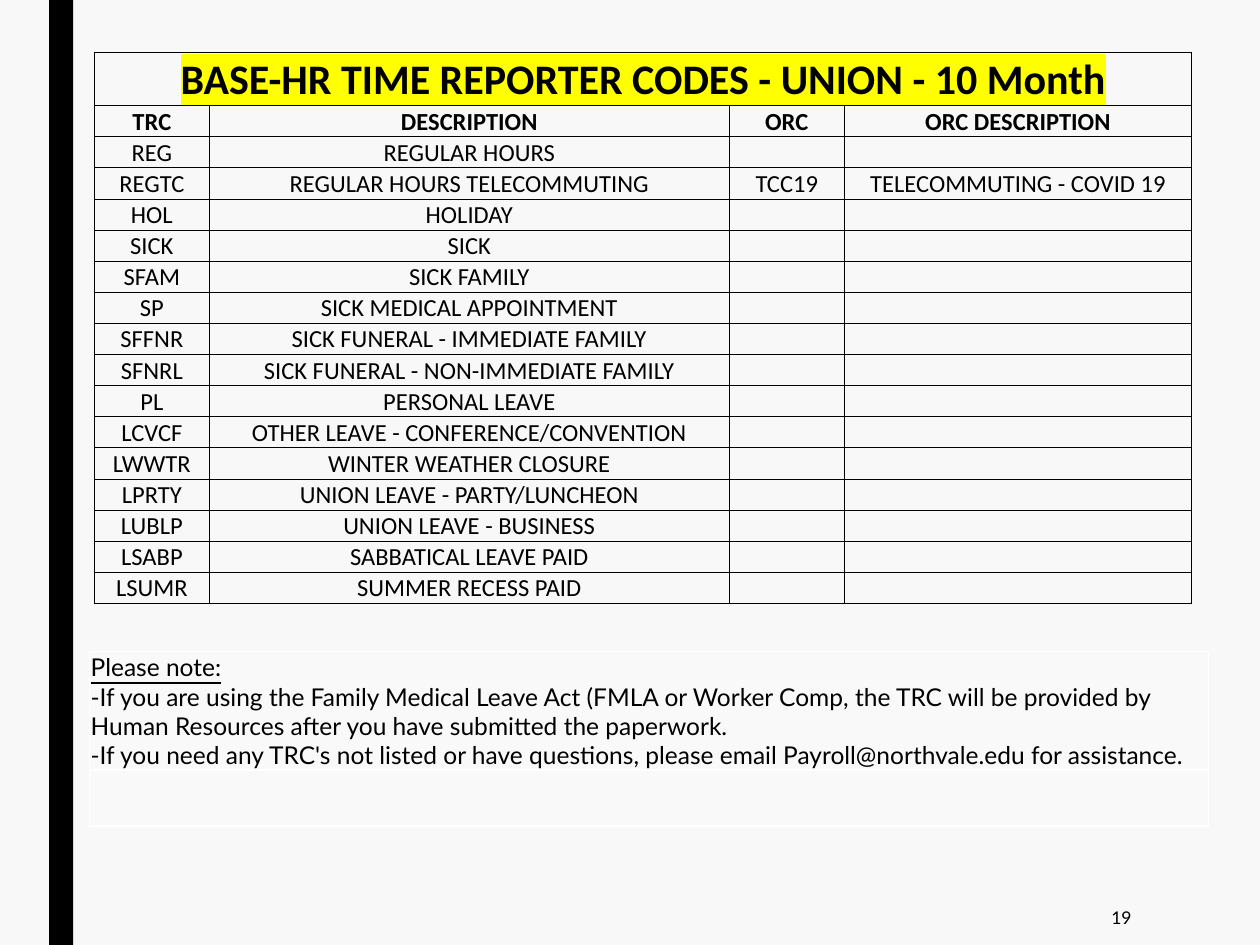
from dataclasses import dataclass
from lxml.etree import SubElement
from pptx import Presentation
from pptx.dml.color import RGBColor as RGB
from pptx.enum.shapes import MSO_SHAPE as Preset
from pptx.enum.text import MSO_ANCHOR as Anchor, PP_ALIGN as Align
from pptx.oxml.ns import qn
from pptx.slide import Slide
from pptx.util import Pt


@dataclass(frozen=True)
class Theme:
    background: str = "F8F8F8"
    ink: str = "000000"
    note_fill: str = "F9F9F9"
    note_border: str = "FFFFFF"
    marker: str = "FFFF00"
    code_font: str = "Calibri"
    note_font: str = "Lato"
    title_size: float = 24
    body_size: float = 14
    page_size: float = 10
    plain_table: str = "{2D5ABB26-0587-4C30-8999-92F81FD0307C}"


def write(paragraph, text, *, font, size, color, align=Align.LEFT,
          bold=False, underline=False, highlight=None):
    paragraph.alignment = align
    if not text:
        SubElement(paragraph._p, qn("a:endParaRPr"), sz=str(int(size * 100)))
        return
    run = paragraph.add_run()
    run.text = text
    style = run.font
    style.size, style.bold, style.underline = Pt(size), bold, underline
    style.color.rgb = RGB.from_string(color)
    if highlight:
        marker = SubElement(run._r.get_or_add_rPr(), qn("a:highlight"))
        SubElement(marker, qn("a:srgbClr"), val=highlight)
    style.name = font


@dataclass
class Page:
    theme: Theme
    slide: Slide

    def background(self):
        fill = self.slide.background.fill
        fill.solid()
        fill.fore_color.rgb = RGB.from_string(self.theme.background)

    def bar(self, left, top, width, height):
        bar = self.slide.shapes.add_shape(
            Preset.RECTANGLE, Pt(left), Pt(top), Pt(width), Pt(height))
        bar.shadow.inherit = False
        bar.fill.solid()
        bar.fill.fore_color.rgb = RGB.from_string(self.theme.ink)
        bar.line.fill.background()

    def text(self, left, top, width, height, words, **style):
        frame = self.slide.shapes.add_textbox(
            Pt(left), Pt(top), Pt(width), Pt(height)).text_frame
        frame.word_wrap = True
        frame.vertical_anchor = Anchor.MIDDLE
        write(frame.paragraphs[0], words, **style)

    def table(self, left, top, widths, heights):
        table = self.slide.shapes.add_table(
            len(heights), len(widths), Pt(left), Pt(top),
            Pt(sum(widths)), Pt(sum(heights))).table
        table.first_row = table.horz_banding = False
        table._tbl.tblPr.find(qn("a:tableStyleId")).text = self.theme.plain_table
        for column, width in zip(table.columns, widths):
            column.width = Pt(width)
        for row, height in zip(table.rows, heights):
            row.height = Pt(height)
        return table

    def cell(self, cell, border, weight, fill=None):
        cell.margin_left = cell.margin_right = cell.margin_top = Pt(0.7)
        cell.margin_bottom = 0
        cell.vertical_anchor = Anchor.BOTTOM
        for side in ("lnL", "lnR", "lnT", "lnB"):
            line = SubElement(cell._tc.get_or_add_tcPr(), qn(f"a:{side}"),
                              w=str(Pt(weight)))
            paint = SubElement(line, qn("a:solidFill"))
            SubElement(paint, qn("a:srgbClr"), val=border)
        if fill:
            cell.fill.solid()
            cell.fill.fore_color.rgb = RGB.from_string(fill)
        else:
            cell.fill.background()

    def code_table(self, left, top, widths, title, rows):
        theme = self.theme
        style = dict(font=theme.code_font, color=theme.ink, align=Align.CENTER)
        table = self.table(left, top, widths, [30.4] + [17.8] * len(rows))
        for cell in table.iter_cells():
            self.cell(cell, theme.ink, 0.5)
        heading = table.cell(0, 0)
        heading.merge(table.cell(0, len(widths) - 1))
        write(heading.text_frame.paragraphs[0], title, size=theme.title_size,
              bold=True, highlight=theme.marker, **style)
        for r, row in enumerate(rows, 1):
            for c in range(len(widths)):
                words = row[c] if c < len(row) else ""
                write(table.cell(r, c).text_frame.paragraphs[0], words,
                      size=theme.body_size, bold=r == 1, **style)

    def note_table(self, left, top, width, heights, lines):
        theme = self.theme
        table = self.table(left, top, [width], heights)
        for cell in table.iter_cells():
            self.cell(cell, theme.note_border, 1, theme.note_fill)
        frame = table.cell(0, 0).text_frame
        for i, words in enumerate(lines):
            paragraph = frame.add_paragraph() if i else frame.paragraphs[0]
            write(paragraph, words, font=theme.note_font, size=theme.body_size,
                  color=theme.ink, underline=i == 0)


CODES = [
    ("TRC", "DESCRIPTION", "ORC", "ORC DESCRIPTION"),
    ("REG", "REGULAR HOURS"),
    ("REGTC", "REGULAR HOURS TELECOMMUTING", "TCC19", "TELECOMMUTING - COVID 19"),
    ("HOL", "HOLIDAY"),
    ("SICK", "SICK"),
    ("SFAM", "SICK FAMILY"),
    ("SP", "SICK MEDICAL APPOINTMENT"),
    ("SFFNR", "SICK FUNERAL - IMMEDIATE FAMILY"),
    ("SFNRL", "SICK FUNERAL - NON-IMMEDIATE FAMILY"),
    ("PL", "PERSONAL LEAVE"),
    ("LCVCF", "OTHER LEAVE - CONFERENCE/CONVENTION"),
    ("LWWTR", "WINTER WEATHER CLOSURE"),
    ("LPRTY", "UNION LEAVE - PARTY/LUNCHEON"),
    ("LUBLP", "UNION LEAVE - BUSINESS"),
    ("LSABP", "SABBATICAL LEAVE PAID"),
    ("LSUMR", "SUMMER RECESS PAID"),
]
NOTES = [
    "Please note:",
    "-If you are using the Family Medical Leave Act (FMLA or Worker Comp, the TRC "
    "will be provided by Human Resources after you have submitted the paperwork.",
    "-If you need any TRC's not listed or have questions, please email "
    "Payroll@northvale.edu for assistance.",
]

deck = Presentation()
deck.slide_width, deck.slide_height = Pt(720), Pt(540)
theme = Theme()
page = Page(theme, deck.slides.add_slide(deck.slide_layouts[6]))
page.background()
page.bar(28.1, 0, 13.7, 540)
page.text(559.4, 508.3, 94.3, 31.7, "19", font=theme.note_font,
          size=theme.page_size, color=theme.ink, align=Align.RIGHT)
page.code_table(54, 30, [65.6, 297.2, 65.6, 198.7],
                "BASE-HR TIME REPORTER CODES - UNION - 10 Month", CODES)
page.note_table(51.1, 372.2, 639.4, [67.6, 32], NOTES)
deck.save("out.pptx")
